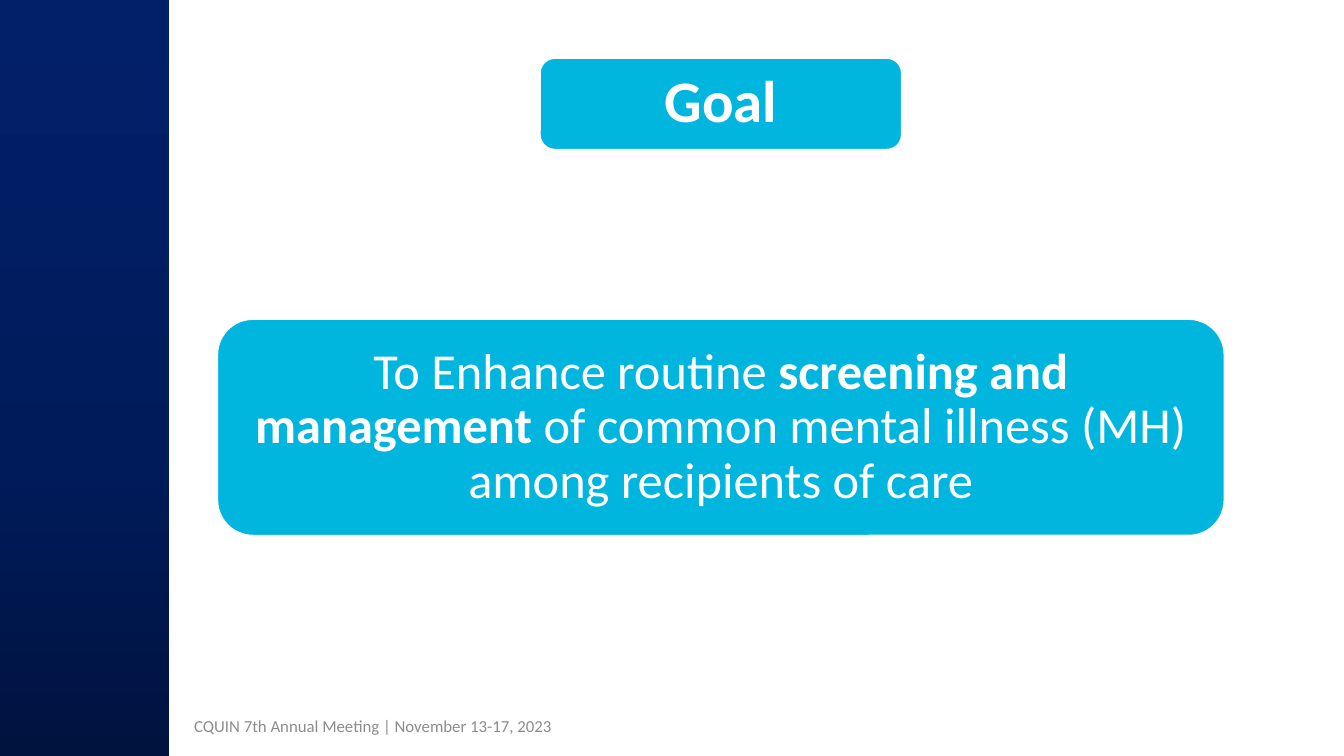
"""Builds the goal slide: a navy side band, two rounded cards and a footer."""
import copy

import pptx
import pptx.dml.color
import pptx.enum.shapes
import pptx.enum.text
import pptx.util

Inches, Pt = pptx.util.Inches, pptx.util.Pt
RGBColor = pptx.dml.color.RGBColor
SHAPES = pptx.enum.shapes.MSO_SHAPE

WHITE = RGBColor(0xFF, 0xFF, 0xFF)
CYAN = RGBColor(0x00, 0xB5, 0xDE)
GREY = RGBColor(0x8C, 0x8C, 0x8C)
BAND_STOPS = [
    (0, RGBColor(0x00, 0x13, 0x3F)),
    (0.38, RGBColor(0x00, 0x1B, 0x5A)),
    (1, RGBColor(0x02, 0x20, 0x69)),
]
FONT = "Calibri"
SLIDE_W, SLIDE_H, BAND_W = 13.33, 7.5, 1.68
CARD_CENTER = 7.15

FOOTER = "CQUIN 7th Annual Meeting | November 13-17, 2023"
CARDS = [
    {"top": 0.57, "size": (3.6, 0.92), "insets": (0.17, 0.09), "points": 42,
     "runs": [("Goal", True)]},
    {"top": 3.16, "size": (10, 2.16), "insets": (0.15, 0.15), "points": 36,
     "runs": [("To Enhance routine", False),
              (" screening and management", True),
              (" of common mental illness (MH) among recipients of care", False)]},
]


def write_centered(frame, runs, points, color):
    frame.word_wrap = True
    frame.vertical_anchor = pptx.enum.text.MSO_ANCHOR.MIDDLE
    paragraph = frame.paragraphs[0]
    paragraph.alignment = pptx.enum.text.PP_ALIGN.CENTER
    for words, bold in runs:
        run = paragraph.add_run()
        run.text = words
        run.font.name, run.font.size, run.font.bold = FONT, Pt(points), bold
        run.font.color.rgb = color
    return paragraph


def add_band(slide):
    band = slide.shapes.add_shape(SHAPES.RECTANGLE, 0, 0, Inches(BAND_W), Inches(SLIDE_H))
    band.shadow.inherit = False
    band.line.fill.background()
    band.fill.gradient()
    band.fill.gradient_angle = 90
    first_stop = band.fill._fill._gradFill.gsLst[0]
    first_stop.addnext(copy.deepcopy(first_stop))
    for stop, (position, color) in zip(band.fill.gradient_stops, BAND_STOPS):
        stop.position = position
        stop.color.rgb = color


def add_footer(slide):
    footer = slide.shapes.add_textbox(Inches(0.25), Inches(7), Inches(6.9), Inches(0.4))
    write_centered(footer.text_frame, [(FOOTER, False)], 12, GREY)


def add_card(slide, content):
    width, height = content["size"]
    card = slide.shapes.add_shape(
        SHAPES.ROUNDED_RECTANGLE, Inches(CARD_CENTER - width / 2), Inches(content["top"]),
        Inches(width), Inches(height))
    card.shadow.inherit = False
    card.fill.solid()
    card.fill.fore_color.rgb = CYAN
    card.line.color.rgb = WHITE
    card.line.width = Pt(2)
    side, edge = content["insets"]
    frame = card.text_frame
    frame.margin_left = frame.margin_right = Inches(side)
    frame.margin_top = frame.margin_bottom = Inches(edge)
    paragraph = write_centered(frame, content["runs"], content["points"], WHITE)
    paragraph.line_spacing = 0.9


def main():
    deck = pptx.Presentation()
    deck.slide_width, deck.slide_height = Inches(SLIDE_W), Inches(SLIDE_H)
    slide = deck.slides.add_slide(deck.slide_layouts[6])
    add_band(slide)
    add_footer(slide)
    for content in CARDS:
        add_card(slide, content)
    deck.save("out.pptx")


if __name__ == "__main__":
    main()
